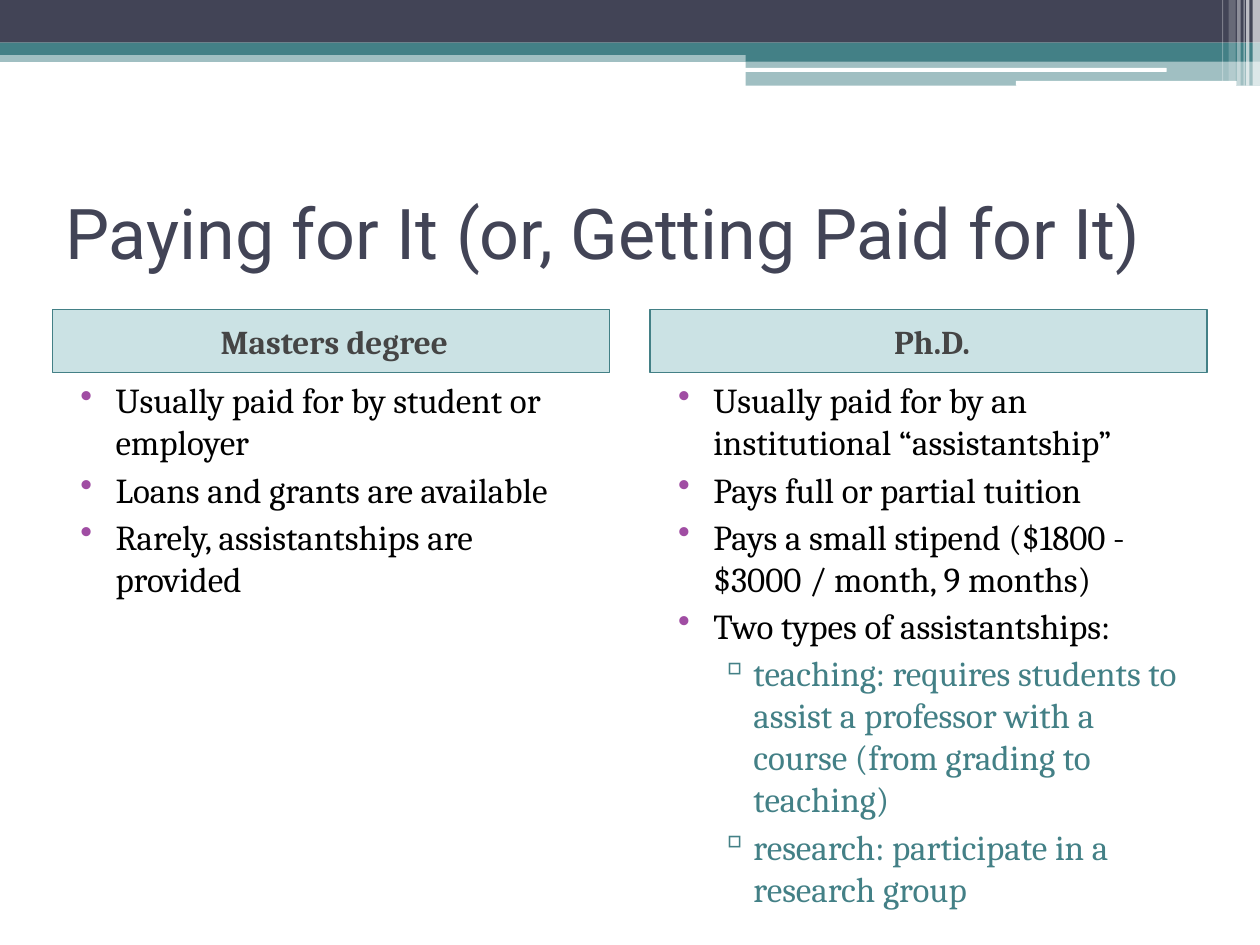
from pptx import Presentation
from pptx.dml.color import RGBColor
from pptx.enum.shapes import MSO_SHAPE
from pptx.enum.text import MSO_ANCHOR, MSO_AUTO_SIZE, PP_ALIGN
from pptx.oxml.ns import qn
from pptx.util import Cm, Pt
from lxml.etree import SubElement

NAVY, TEAL, WHITE = "424456", "438086", "FFFFFF"
BANDS = [
    (0, 1.02, 25.4, 0.23, TEAL, 50),
    (0, 0, 25.4, 0.86, NAVY, 100),
    (0, 0.86, 25.4, 0.25, TEAL, 100),
    (15.03, 0.99, 10.37, 0.25, TEAL, 100),
    (15.03, 1.23, 10.37, 0.5, TEAL, 50),
]
RULES = [(15.01, 1.37, 8.51, 0.08), (20.48, 1.63, 4.45, 0.1)]
STRIPES = [
    (25.25, 0.15, 1.73, 65),
    (25.12, 0.07, 1.73, 65),
    (25.07, 0.02, 1.73, 60),
    (24.94, 0.07, 1.73, 40),
    (24.77, 0.14, 1.63, 20),
    (24.64, 0.02, 1.63, 30),
]
LEVELS = [("•", "A04DA3", "000000", 1.02, 0.71), ("▫", TEAL, TEAL, 1.83, 0.69)]
COLUMNS = [
    ("Masters degree", [
        (0, "Usually paid for by student or employer"),
        (0, "Loans and grants are available"),
        (0, "Rarely, assistantships are provided"),
    ]),
    ("Ph.D.", [
        (0, "Usually paid for by an institutional “assistantship”"),
        (0, "Pays full or partial tuition"),
        (0, "Pays a small stipend ($1800 - $3000 / month, 9 months)"),
        (0, "Two types of assistantships:"),
        (1, "teaching: requires students to assist a professor with a "
            "course (from grading to teaching)"),
        (1, "research: participate in a research group"),
    ]),
]
LEFT, WIDTH, STEP = 1.06, 11.23, 12.05


def paint(code):
    return RGBColor.from_string(code)


class Deck:
    """Hold the slide style and draw each kind of element."""

    def __init__(self):
        self.file = Presentation()
        self.file.slide_width, self.file.slide_height = Cm(25.4), Cm(19.05)
        self.slide = self.file.slides.add_slide(self.file.slide_layouts[5])
        self.face, self.head = "Cambria", "Roboto"

    def style(self, para, face, size, color, bold=False):
        for run in para.runs:
            font = run.font
            font.name, font.size, font.bold = face, Pt(size), bold
            font.color.rgb = paint(color)

    def title(self, text, x, y, w, h):
        shape = self.slide.shapes.title
        shape.left, shape.top, shape.width, shape.height = map(Cm, (x, y, w, h))
        frame = shape.text_frame
        frame.text = text
        frame.word_wrap, frame.auto_size = True, MSO_AUTO_SIZE.NONE
        frame.vertical_anchor = MSO_ANCHOR.MIDDLE
        para = frame.paragraphs[0]
        para.alignment = PP_ALIGN.LEFT
        self.style(para, self.head, 40, NAVY)

    def block(self, x, y, w, h, color, alpha=100, kind=MSO_SHAPE.RECTANGLE):
        shape = self.slide.shapes.add_shape(kind, *map(Cm, (x, y, w, h)))
        shape.shadow.inherit = False
        shape.fill.solid()
        shape.fill.fore_color.rgb = paint(color)
        shape.line.fill.background()
        if alpha < 100:
            tint = next(shape._element.spPr.iter(qn("a:srgbClr")))
            SubElement(tint, qn("a:alpha"), val=str(alpha * 1000))
        return shape

    def label(self, text, x, y, w, h):
        shape = self.block(x, y, w, h, "328E97", 25)
        shape.line.color.rgb = paint(TEAL)
        shape.line.width = Pt(1)
        frame = shape.text_frame
        frame.text = text
        frame.word_wrap = True
        frame.vertical_anchor = MSO_ANCHOR.MIDDLE
        para = frame.paragraphs[0]
        para.alignment, para.space_before = PP_ALIGN.CENTER, Pt(3)
        para._p.get_or_add_pPr().set("marL", str(Cm(0.13)))
        self.style(para, self.face, 19, "454545", True)

    def bullets(self, items, x, y, w, h):
        frame = self.slide.shapes.add_textbox(*map(Cm, (x, y, w, h))).text_frame
        frame.word_wrap = True
        frame.text = "\n".join(text for _, text in items)
        for para, (level, _) in zip(frame.paragraphs, items):
            mark, tint, color, indent, hang = LEVELS[level]
            para.level, para.space_before = level, Pt(3)
            props = para._p.get_or_add_pPr()
            props.set("marL", str(Cm(indent)))
            props.set("indent", str(-Cm(hang)))
            SubElement(SubElement(props, qn("a:buClr")), qn("a:srgbClr"), val=tint)
            SubElement(props, qn("a:buChar"), char=mark)
            self.style(para, self.face, 20, color)


def main():
    deck = Deck()
    for band in BANDS:
        deck.block(*band)
    for rule in RULES:
        deck.block(*rule, WHITE, kind=MSO_SHAPE.ROUNDED_RECTANGLE)
    for x, width, height, alpha in STRIPES:
        deck.block(x, 0, width, height, WHITE, alpha)
    deck.title("Paying for It (or, Getting Paid for It)", LEFT, 3.18, 23.28, 2.96)
    for index, (name, items) in enumerate(COLUMNS):
        x = LEFT + index * STEP
        deck.label(name, x, 6.24, WIDTH, 1.27)
        deck.bullets(items, x, 7.51, WIDTH, 10.8)
    deck.file.save("out.pptx")


if __name__ == "__main__":
    main()
